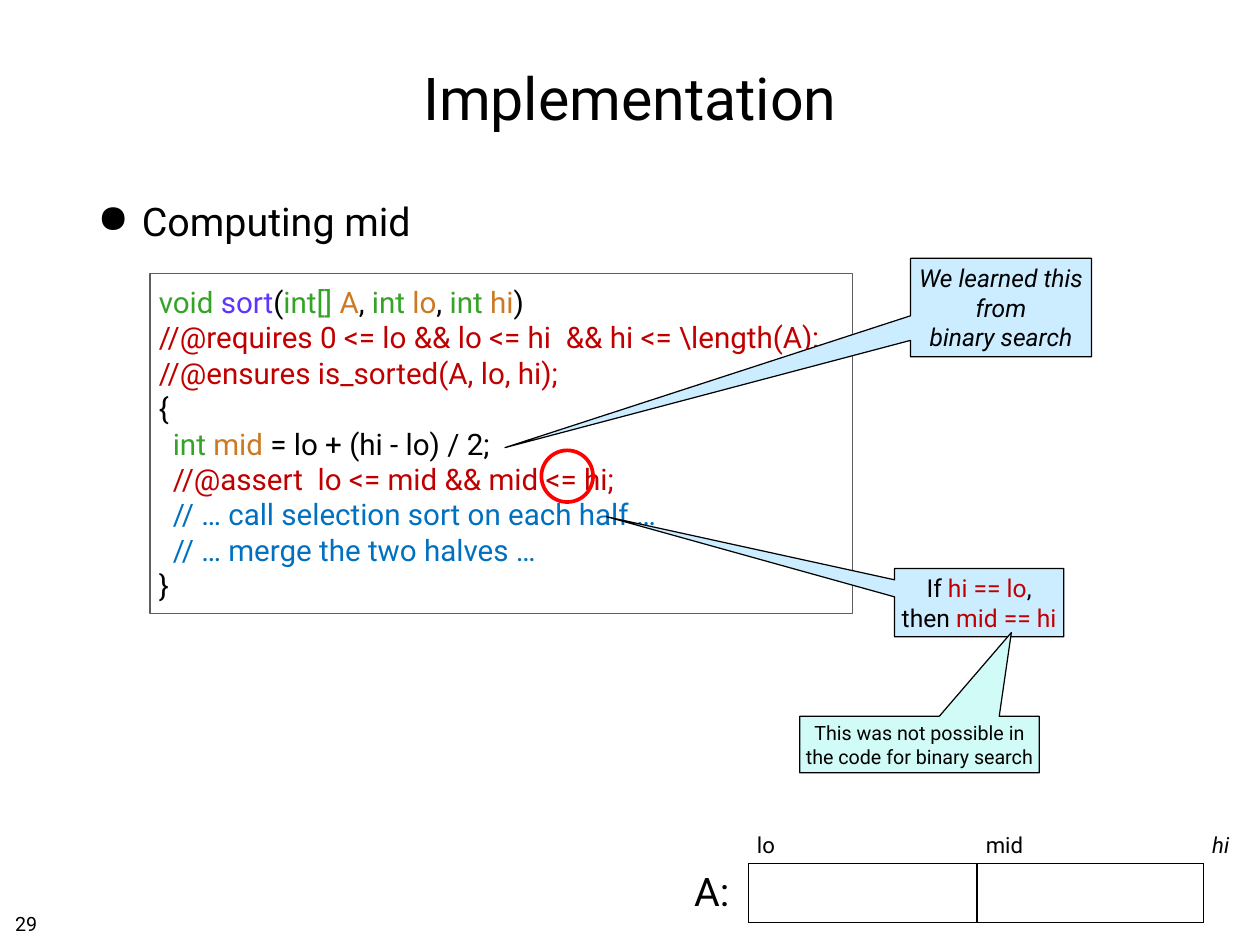
from dataclasses import dataclass
from typing import NamedTuple

import lxml.etree
import pptx
import pptx.dml.color
import pptx.enum.shapes
import pptx.enum.text
import pptx.oxml
import pptx.oxml.ns
import pptx.util

Pt = pptx.util.Pt
RGB = pptx.dml.color.RGBColor
SHAPE = pptx.enum.shapes.MSO_SHAPE
ALIGN = pptx.enum.text.PP_ALIGN
ANCHOR = pptx.enum.text.MSO_ANCHOR
qn = pptx.oxml.ns.qn


@dataclass(frozen=True)
class Theme:
    font: str = "Roboto"
    black: str = "000000"
    keyword: str = "34A327"
    function: str = "5E34FF"
    variable: str = "CD7923"
    contract: str = "C00000"
    comment: str = "0070C0"
    frame: str = "5E5E5E"
    ring: str = "FF0000"
    note: str = "CCECFF"
    side_note: str = "D0FBF6"
    title_size: float = 48
    body_size: float = 32
    code_size: float = 24
    note_size: float = 20
    label_size: float = 18
    small_size: float = 16


THEME = Theme()


class Box(NamedTuple):
    left: float
    top: float
    width: float
    height: float


class Span(NamedTuple):
    text: str
    color: str = THEME.black


class Line(NamedTuple):
    spans: list[Span]
    indent: float = 0


@dataclass(frozen=True)
class Callout:
    box: Box
    tip: tuple[float, float]
    fill: str
    size: float
    lines: list[Line]
    italic: bool = False


CODE_INDENT = 11.4
CODE = [
    Line([Span("void ", THEME.keyword), Span("sort", THEME.function), Span("("),
          Span("int[] ", THEME.keyword), Span("A", THEME.variable), Span(", "),
          Span("int ", THEME.keyword), Span("lo", THEME.variable), Span(", "),
          Span("int ", THEME.keyword), Span("hi", THEME.variable), Span(")")]),
    Line([Span("//@requires 0 <= lo && lo <= hi  && hi <= \\length(A);", THEME.contract)]),
    Line([Span("//@ensures is_sorted(A, lo, hi);", THEME.contract)]),
    Line([Span("{")]),
    Line([Span("int ", THEME.keyword), Span("mid", THEME.variable),
          Span(" = lo + (hi - lo) / 2;")], CODE_INDENT),
    Line([Span("//@assert  lo <= mid && mid <= hi;", THEME.contract)], CODE_INDENT),
    Line([Span("// … call selection sort on each half …", THEME.comment)], CODE_INDENT),
    Line([Span("// … merge the two halves …", THEME.comment)], CODE_INDENT),
    Line([Span("}")]),
]
LEARNED = Callout(Box(740, 210, 147, 80), (-2.742, 1.423), THEME.note, THEME.note_size,
                  [Line([Span("We learned this")]), Line([Span("from")]),
                   Line([Span("binary search")])], italic=True)
EQUAL_CASE = Callout(Box(727, 462, 137.5, 55.5), (-2.201, -1.257), THEME.note, THEME.note_size,
                     [Line([Span("If "), Span("hi == lo", THEME.contract), Span(",")]),
                      Line([Span("then "), Span("mid == hi", THEME.contract)])])
NOT_POSSIBLE = Callout(Box(650, 582, 194.5, 46), (0.384, -1.978), THEME.side_note,
                       THEME.small_size,
                       [Line([Span("This was not possible in")]),
                        Line([Span("the code for binary search")])])


def points(box: Box) -> list[int]:
    return [Pt(v) for v in box]


def set_frame(tf, inset: float, anchor=ANCHOR.MIDDLE, wrap: bool = True) -> None:
    tf.word_wrap = wrap
    tf.vertical_anchor = anchor
    tf.margin_left = tf.margin_right = tf.margin_top = tf.margin_bottom = Pt(inset)


def style_run(r, size: float, color: str = THEME.black, italic: bool = False) -> None:
    r.font.name = THEME.font
    r.font.size = Pt(size)
    r.font.italic = italic
    r.font.color.rgb = RGB.from_string(color)


def write_lines(tf, lines: list[Line], size: float, align=ALIGN.LEFT, italic=False) -> None:
    for i, line in enumerate(lines):
        p = tf.add_paragraph() if i else tf.paragraphs[0]
        p.alignment = align
        if line.indent:
            p._p.get_or_add_pPr().set("marL", str(Pt(line.indent)))
        for span in line.spans:
            r = p.add_run()
            r.text = span.text
            style_run(r, size, span.color, italic)


def add_outline(s, kind, box: Box, color: str, width: float, fill: str | None = None):
    sp = s.shapes.add_shape(kind, *points(box))
    sp.shadow.inherit = False
    sp.line.color.rgb = RGB.from_string(color)
    sp.line.width = Pt(width)
    if fill:
        sp.fill.solid()
        sp.fill.fore_color.rgb = RGB.from_string(fill)
    else:
        sp.fill.background()
    return sp


def add_callout(s, callout: Callout) -> None:
    sp = add_outline(s, SHAPE.RECTANGULAR_CALLOUT, callout.box, THEME.black, 1, callout.fill)
    sp.adjustments[0], sp.adjustments[1] = callout.tip
    set_frame(sp.text_frame, 3.6, wrap=False)
    write_lines(sp.text_frame, callout.lines, callout.size, ALIGN.CENTER, callout.italic)


def add_text(s, box: Box, text: str, size: float, align=ALIGN.LEFT, anchor=ANCHOR.TOP,
             wrap: bool = True):
    sp = s.shapes.add_textbox(*points(box))
    set_frame(sp.text_frame, 4.3, anchor, wrap)
    write_lines(sp.text_frame, [Line([Span(text)])], size, align)
    return sp


def add_bullet(p, char: str, indent: float) -> None:
    pPr = p._p.get_or_add_pPr()
    pPr.set("marL", str(Pt(indent)))
    pPr.set("indent", str(-Pt(indent)))
    lxml.etree.SubElement(pPr, qn("a:buChar")).set("char", char)


def set_borders(cell, sides: str) -> None:
    """Draw a black border on each side named in sides (L, R, T, B), none elsewhere."""
    tcPr = cell._tc.get_or_add_tcPr()
    for i, side in enumerate("LRTB"):
        ln = pptx.oxml.ns and lxml.etree.Element(qn(f"a:ln{side}"), w=str(Pt(1)))
        if side in sides:
            fill = lxml.etree.SubElement(ln, qn("a:solidFill"))
            lxml.etree.SubElement(fill, qn("a:srgbClr")).set("val", THEME.black)
        else:
            lxml.etree.SubElement(ln, qn("a:noFill"))
        tcPr.insert(i, ln)


def add_array(s, box: Box, labels: list[str], widths: list[float], heights: list[float]) -> None:
    """Draw the array cells under their index labels; the last label marks the end."""
    table = s.shapes.add_table(len(heights), len(widths), *points(box)).table
    table.first_row = table.horz_banding = False
    for column, width in zip(table.columns, widths):
        column.width = Pt(width)
    for row, height in zip(table.rows, heights):
        row.height = Pt(height)
    for i, label in enumerate(labels):
        is_end = i == len(labels) - 1
        head, body = table.cell(0, i), table.cell(1, i)
        head.vertical_anchor = ANCHOR.BOTTOM
        write_lines(head.text_frame, [Line([Span(label)])], THEME.label_size, italic=is_end)
        for cell, sides in ((head, "" if is_end else "B"), (body, "L" if is_end else "LRTB")):
            cell.fill.background()
            set_borders(cell, sides)


def main() -> None:
    prs = pptx.Presentation()
    prs.slide_width, prs.slide_height = Pt(1024), Pt(768)
    s = prs.slides.add_slide(prs.slide_layouts[5])

    title = s.shapes.title
    title.left, title.top, title.width, title.height = points(Box(75, 20, 874, 118))
    set_frame(title.text_frame, 4.3)
    title.text_frame.text = "Implementation"
    title.text_frame.paragraphs[0].alignment = ALIGN.CENTER
    style_run(title.text_frame.paragraphs[0].runs[0], THEME.title_size)

    topic = add_text(s, Box(75, 156, 874, 543), "Computing mid", THEME.body_size)
    p = topic.text_frame.paragraphs[0]
    p.space_before = Pt(8)
    add_bullet(p, "●", 36)

    code = add_outline(s, SHAPE.RECTANGLE, Box(122, 222, 571, 276.5), THEME.frame, 1)
    set_frame(code.text_frame, 7.2)
    write_lines(code.text_frame, CODE, THEME.code_size)

    add_callout(s, LEARNED)
    add_outline(s, SHAPE.OVAL, Box(440, 366, 42, 42), THEME.ring, 3)
    add_callout(s, EQUAL_CASE)
    add_callout(s, NOT_POSSIBLE)

    add_text(s, Box(554, 700.5, 49, 47), "A:", THEME.body_size, ALIGN.CENTER, ANCHOR.MIDDLE)
    add_array(s, Box(608, 666, 402, 84), ["lo", "mid", "hi"], [186, 184, 32], [36, 48])
    add_text(s, Box(8, 736.5, 27, 25), "29", THEME.small_size, wrap=False)
    prs.save("out.pptx")


if __name__ == "__main__":
    main()
